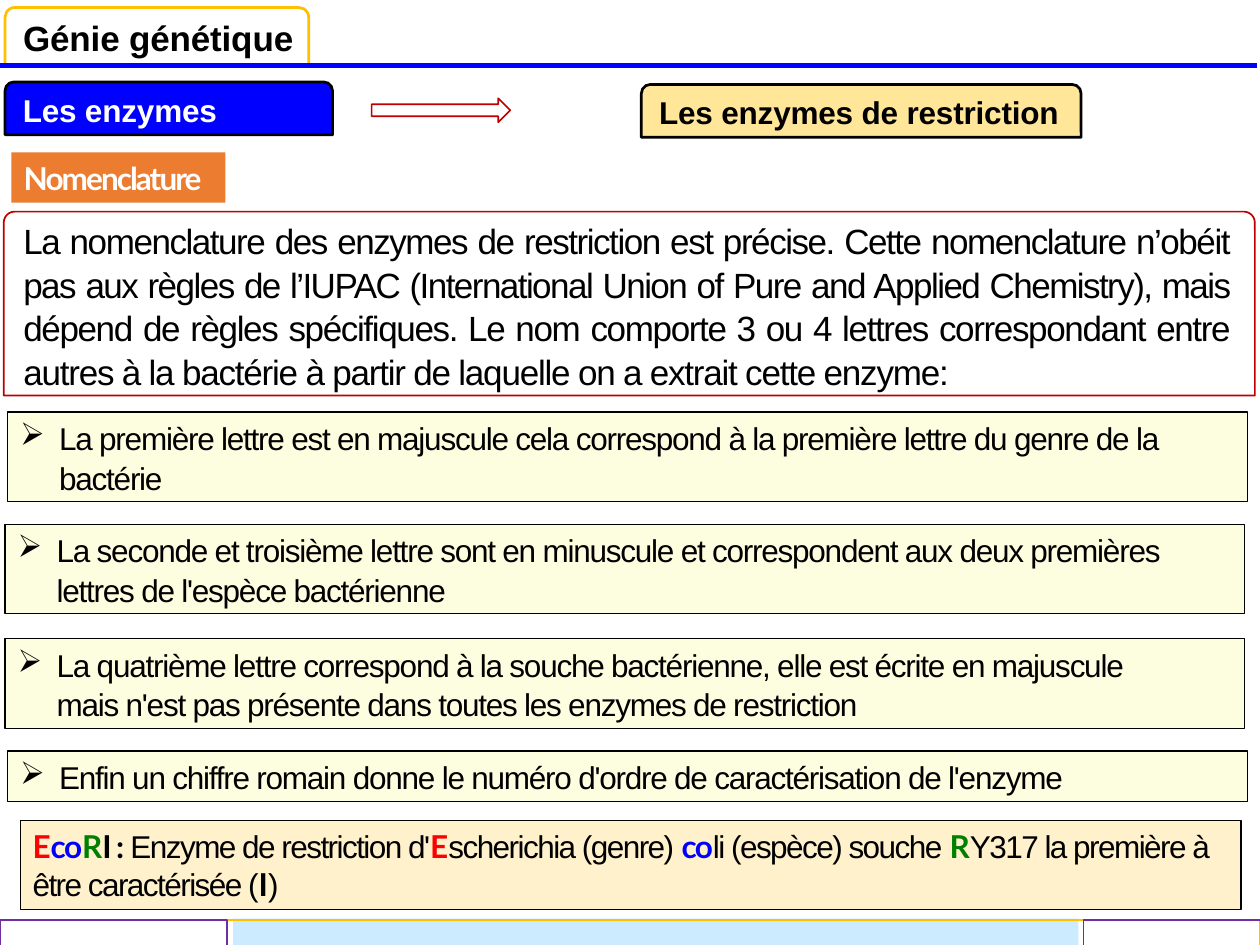
from lxml import etree
from pptx import Presentation
from pptx.dml.color import RGBColor
from pptx.enum.shapes import MSO_CONNECTOR, MSO_SHAPE
from pptx.enum.text import MSO_ANCHOR, PP_ALIGN
from pptx.oxml.ns import qn
from pptx.util import Inches, Pt

RECT = MSO_SHAPE.RECTANGLE
ROUND_TOP = MSO_SHAPE.ROUND_2_SAME_RECTANGLE
ARROW = MSO_SHAPE.RIGHT_ARROW
LEFT, JUSTIFY = PP_ALIGN.LEFT, PP_ALIGN.JUSTIFY
MIDDLE = MSO_ANCHOR.MIDDLE

BLACK = RGBColor(0x00, 0x00, 0x00)
WHITE = RGBColor(0xFF, 0xFF, 0xFF)
BLUE = RGBColor(0x00, 0x00, 0xFF)
RED = RGBColor(0xFF, 0x00, 0x00)
GREEN = RGBColor(0x00, 0x80, 0x00)
DARK_RED = RGBColor(0xC0, 0x00, 0x00)
GOLD = RGBColor(0xFF, 0xC0, 0x00)
SAND = RGBColor(0xFF, 0xE6, 0x99)
ORANGE = RGBColor(0xEC, 0x7C, 0x30)
YELLOW = RGBColor(0xFB, 0xFB, 0xAA)
CREAM = RGBColor(0xFF, 0xF1, 0xCC)
SKY = RGBColor(0xCC, 0xEB, 0xFF)
PURPLE = RGBColor(0x6F, 0x2F, 0x9F)

# The slide is a grid of 100 columns by 75 rows of square cells.
COLS, ROWS = 100, 75
CELL = Inches(0.1)
FOOT, FOOT_LEFT, FOOT_RIGHT = 72.9, 18.5, 85.6

INTRO = [
    ("La nomenclature des enzymes de restriction est précise. Cette "
     "nomenclature n’obéit ", -0.85),
    ("pas aux règles de l’IUPAC (International Union of Pure and Applied "
     "Chemistry), mais ", -0.92),
    ("dépend de règles spécifiques. Le nom comporte 3 ou 4 lettres "
     "correspondant entre ", -0.78),
    ("autres à la bactérie à partir de laquelle on a extrait cette enzyme:",
     -0.7),
]
RULES = [  # left, top, height, text
    (0.6, 32.7, 7.1, "La première lettre est en majuscule cela correspond à la "
     "première lettre du genre de la bactérie"),
    (0.4, 41.6, 7.1, "La seconde et troisième lettre sont en minuscule et "
     "correspondent aux deux premières lettres de l'espèce bactérienne"),
    (0.4, 50.7, 7.1, "La quatrième lettre correspond à la souche bactérienne, "
     "elle est écrite en majuscule mais n'est pas présente dans toutes les "
     "enzymes de restriction"),
    (0.6, 59.6, 4, "Enfin un chiffre romain donne le numéro d'ordre de "
     "caractérisation de l'enzyme"),
]
EXAMPLE = [  # a colour marks the bold Lato runs
    [("E", RED), ("co", BLUE), ("R", GREEN), ("I : ", BLACK),
     ("Enzyme de restriction d'", None), ("E", RED),
     ("scherichia (genre) ", None), ("co", BLUE),
     ("li (espèce) souche ", None), ("R", GREEN),
     ("Y317 la première à", None)],
    [("être caractérisée (", None), ("I", BLACK), (")", None)],
]


def cells(*values):
    return [round(v * CELL) for v in values]


def paint(sp, fill=None, line=None, width=0.96):
    sp.shadow.inherit = False
    if fill is None:
        sp.fill.background()
    else:
        sp.fill.solid()
        sp.fill.fore_color.rgb = fill
    if line is None:
        sp.line.fill.background()
    else:
        sp.line.color.rgb = line
        sp.line.width = Pt(width)
    return sp


def box(slide, kind, at, fill=None, line=None, width=0.96, corner=None):
    sp = paint(slide.shapes.add_shape(kind, *cells(*at)), fill, line, width)
    if corner is not None:
        sp.adjustments[0] = corner
    return sp


def path(slide, points, line):
    """Open outline through grid points."""
    fb = slide.shapes.build_freeform(*points[0], scale=CELL)
    fb.add_line_segments(points[1:], close=False)
    return paint(fb.convert_to_shape(), line=line)


def frame(sp, left=1.2, right=0):
    tf = sp.text_frame
    tf.word_wrap = True
    tf.vertical_anchor = MIDDLE
    tf.margin_left, tf.margin_right = cells(left, right)
    tf.margin_top = tf.margin_bottom = 0
    return tf


def style(p, size, color=BLACK, bold=False, font="Arial", align=LEFT):
    p.alignment = align
    p.font.size, p.font.bold, p.font.name = Pt(size), bold, font
    p.font.color.rgb = color


def add_run(p, text, spacing):
    """Run with letter spacing in points."""
    r = p.add_run()
    r.text = text
    r._r.get_or_add_rPr().set("spc", str(round(spacing * 100)))
    return r


def label(sp, text, size=18, color=BLACK, font="Arial", spacing=-0.1, left=1.2):
    p = frame(sp, left).paragraphs[0]
    style(p, size, color, True, font)
    add_run(p, text, spacing)


def rule(slide, left, top, height, text):
    """Translucent box holding one arrow-bulleted rule."""
    sp = box(slide, RECT, (left, top, 98.4, height), YELLOW, BLACK, 0.72)
    color = sp._element.spPr.find(qn("a:solidFill"))[0]
    etree.SubElement(color, qn("a:alpha")).set("val", "36000")
    p = frame(sp, left=0, right=6.5).paragraphs[0]
    style(p, 18)
    p.line_spacing = 1.05
    pPr = p._p.get_or_add_pPr()
    pPr.set("marL", str(Inches(0.41)))
    pPr.set("indent", str(-Inches(0.31)))
    bullet = etree.Element(qn("a:buChar"))
    bullet.set("char", "➢")
    pPr.find(qn("a:defRPr")).addprevious(bullet)
    add_run(p, text, -0.7)


def footer(slide):
    box(slide, RECT, (FOOT_LEFT, FOOT, FOOT_RIGHT - FOOT_LEFT, ROWS - FOOT), SKY)
    for right, color in ((COLS, GOLD), (FOOT_LEFT, PURPLE)):
        path(slide, [(right, ROWS), (right, FOOT), (0, FOOT), (0, ROWS)], color)
    path(slide, [(COLS, FOOT), (FOOT_RIGHT, FOOT), (FOOT_RIGHT, ROWS)], PURPLE)


def header(slide):
    label(box(slide, ROUND_TOP, (0.4, 0.6, 24.1, 4.6), None, GOLD, 1.56, 0.17),
          "Génie génétique", 20)
    cx = slide.shapes.add_connector(MSO_CONNECTOR.STRAIGHT,
                                    *cells(0, 5.2, 99.8, 5.2))
    cx.line.color.rgb = BLUE
    cx.line.width = Pt(3)
    etree.SubElement(cx._element.spPr, qn("a:effectLst"))
    label(box(slide, ROUND_TOP, (0.4, 6.5, 26, 4.2), BLUE, BLACK, 1.56, 0.17),
          "Les enzymes", color=WHITE)
    box(slide, ARROW, (29.5, 7.8, 11, 1.9), None, DARK_RED)
    label(box(slide, ROUND_TOP, (50.9, 6.7, 34.9, 4.2), SAND, BLACK, 1.56, 0.17),
          "Les enzymes de restriction")
    label(box(slide, RECT, (0.9, 12.1, 17, 4), ORANGE),
          "Nomenclature", color=WHITE, font="Lato", spacing=-1.1, left=1)


def intro(slide):
    sp = box(slide, ROUND_TOP, (0.3, 16.8, 99.3, 14.6), None, DARK_RED,
             corner=0.06)
    p = frame(sp, left=1.3, right=1.8).paragraphs[0]
    style(p, 20, align=JUSTIFY)
    p.line_spacing = 1.04
    for text, spacing in INTRO:
        add_run(p, text, spacing)


def example(slide):
    sp = box(slide, RECT, (1.6, 65.1, 96.9, 7.1), CREAM, BLACK, 0.72)
    tf = frame(sp, left=1)
    for i, line in enumerate(EXAMPLE):
        p = tf.add_paragraph() if i else tf.paragraphs[0]
        style(p, 18)
        for text, color in line:
            r = add_run(p, text, -0.87)
            if color is not None:
                r.font.name, r.font.bold = "Lato", True
                r.font.color.rgb = color


def main():
    prs = Presentation()
    prs.slide_width, prs.slide_height = cells(COLS, ROWS)
    slide = prs.slides.add_slide(prs.slide_layouts[6])
    footer(slide)
    header(slide)
    intro(slide)
    for item in RULES:
        rule(slide, *item)
    example(slide)
    prs.save("out.pptx")


if __name__ == "__main__":
    main()
